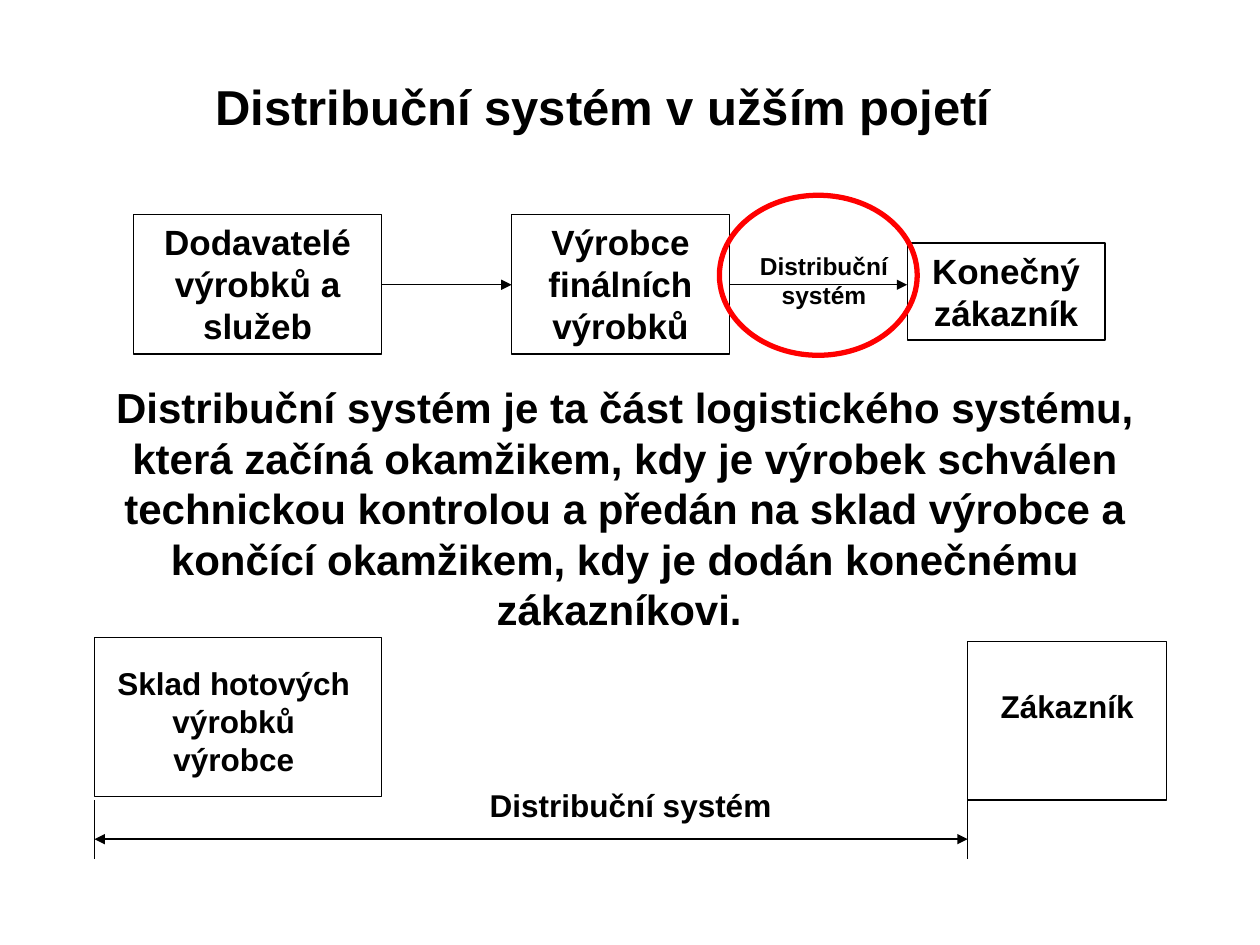
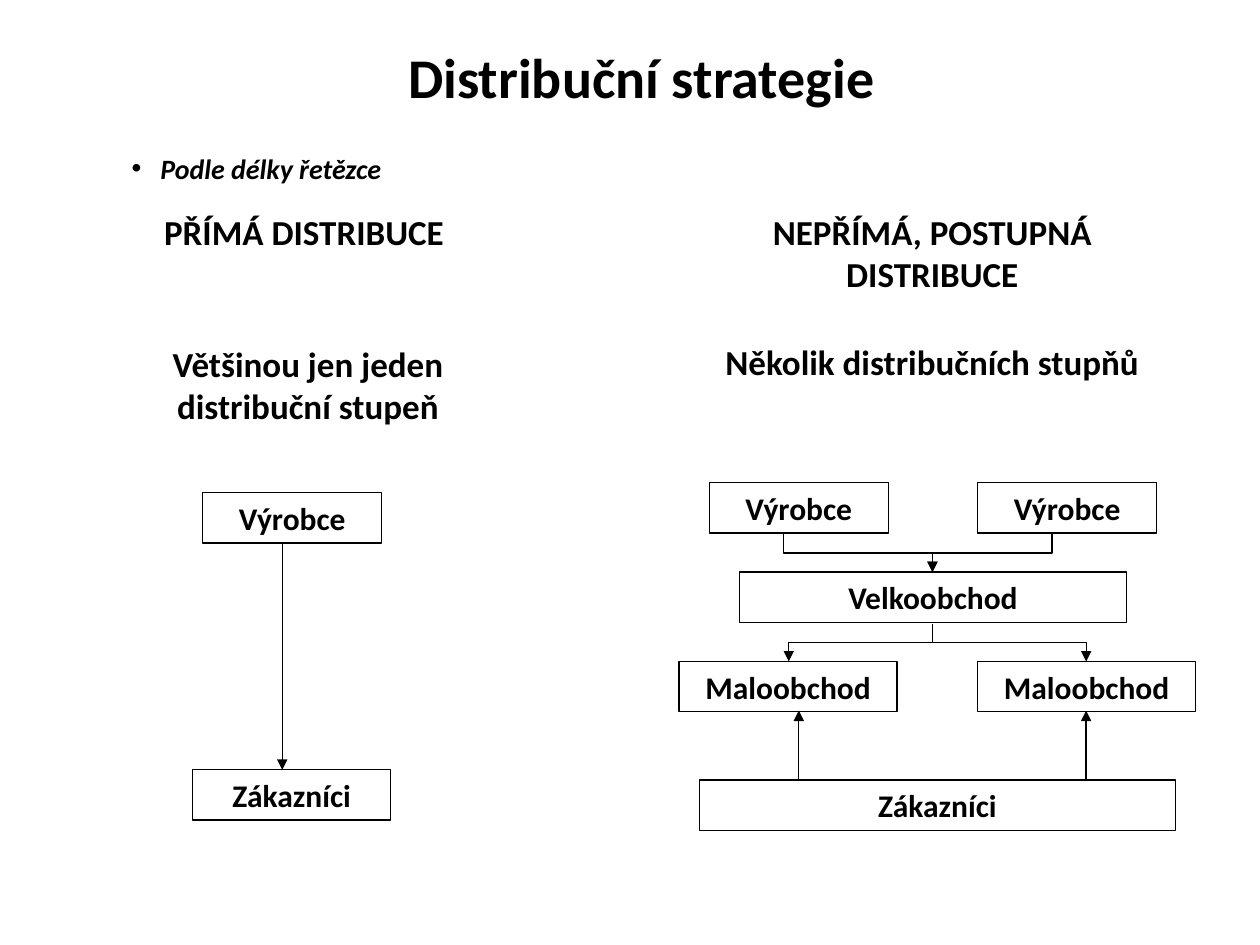
"""Build two slides on distribution systems and distribution strategies."""
import pptx
import pptx.util
import pptx.dml.color
import pptx.enum.shapes
import pptx.enum.text
import pptx.oxml.ns
import lxml.etree

Inches = pptx.util.Inches
Pt = pptx.util.Pt
qn = pptx.oxml.ns.qn
ALIGN = pptx.enum.text.PP_ALIGN
SHAPE = pptx.enum.shapes.MSO_SHAPE
CONNECTOR = pptx.enum.shapes.MSO_CONNECTOR
COLORS = {
    name: pptx.dml.color.RGBColor.from_string(value)
    for name, value in {"ink": "000000", "paper": "FFFFFF", "ring": "FF0000"}.items()
}


def add_box(page, place, text, font, size, outlined=False, filled=True, title=False):
    """Place one box of bold text, or the title placeholder, on the page."""
    if title:
        box = page.shapes.title
        box.left, box.top, box.width, box.height = map(Inches, place)
    else:
        box = page.shapes.add_shape(SHAPE.RECTANGLE, *map(Inches, place))
        box.shadow.inherit = False
    if filled:
        box.fill.solid()
        box.fill.fore_color.rgb = COLORS["paper"]
    else:
        box.fill.background()
    if outlined:
        box.line.color.rgb = COLORS["ink"]
        box.line.width = Pt(0.75)
    else:
        box.line.fill.background()
    frame = box.text_frame
    frame.text = text
    frame.word_wrap = True
    frame.auto_size = pptx.enum.text.MSO_AUTO_SIZE.NONE
    frame.vertical_anchor = pptx.enum.text.MSO_ANCHOR.TOP
    para = frame.paragraphs[0]
    para.alignment = ALIGN.LEFT if title else ALIGN.CENTER
    for span in para.runs:
        span.font.name = font
        span.font.size = Pt(size)
        span.font.bold = True
        span.font.color.rgb = COLORS["ink"]
    return box


def add_line(page, start, end, arrows=("tailEnd",), bent=False):
    """Draw a straight line, or an elbow that leaves and arrives vertically."""
    (x1, y1), (x2, y2) = start, end
    kind = CONNECTOR.STRAIGHT
    rightward = x2 > x1
    if bent:
        kind = CONNECTOR.ELBOW
        middle_x, middle_y = (x1 + x2) / 2, (y1 + y2) / 2
        half_width, half_height = (y2 - y1) / 2, abs(x2 - x1) / 2
        side = 1 if rightward else -1
        x1, x2 = middle_x + side * half_width, middle_x - side * half_width
        y1, y2 = middle_y - half_height, middle_y + half_height
    line = page.shapes.add_connector(kind, *map(Inches, (x1, y1, x2, y2)))
    line.line.color.rgb = COLORS["ink"]
    line.line.width = Pt(0.75)
    properties = line._element.spPr
    if bent:
        turn = 270 if rightward else 90
        properties.find(qn("a:xfrm")).set("rot", str(turn * 60000))
    for arrow in arrows:
        lxml.etree.SubElement(properties.find(qn("a:ln")), qn(f"a:{arrow}"), type="triangle")
    lxml.etree.SubElement(properties, qn("a:effectLst"))


deck = pptx.Presentation()
deck.slide_width = Inches(10)
deck.slide_height = Inches(7.5)
title_only = deck.slide_layouts[5]

page = deck.slides.add_slide(title_only)
font = "Arial"
add_box(page, (1.61, 0.56, 6.6, 0.57), "Distribuční systém v užším pojetí", font, 28,
        filled=False, title=True)

for place, text in [
    ((1.06, 1.7, 1.97, 1.11), "Dodavatelé výrobků a služeb"),
    ((4.06, 1.7, 1.73, 1.11), "Výrobce finálních výrobků"),
    ((7.2, 1.93, 1.57, 0.77), "Konečný zákazník"),
]:
    add_box(page, place, text, font, 20, outlined=True)
for start_x, end_x in [(3.03, 4.06), (5.79, 7.2)]:
    add_line(page, (start_x, 2.26), (end_x, 2.26))
add_box(page, (5.79, 1.94, 1.5, 0.57), "Distribuční systém", font, 14, filled=False)

ring = page.shapes.add_shape(SHAPE.OVAL, Inches(5.71), Inches(1.55), Inches(1.57), Inches(1.27))
ring.shadow.inherit = False
ring.fill.background()
ring.line.color.rgb = COLORS["ring"]
ring.line.width = Pt(3)

definition = add_box(
    page, (0.67, 2.97, 8.58, 2.12),
    "Distribuční systém je ta část logistického systému, která začíná okamžikem, "
    "kdy je výrobek schválen technickou kontrolou a předán na sklad výrobce a končící "
    "okamžikem, kdy je dodán konečnému zákazníkovi. ", font, 24)
definition.text_frame.vertical_anchor = pptx.enum.text.MSO_ANCHOR.MIDDLE

for frame_place, place, text in [
    ((0.75, 5.06, 2.28, 1.26), (0.83, 5.22, 2.05, 1.01), "Sklad hotových výrobků výrobce"),
    ((7.68, 5.09, 1.58, 1.26), (7.84, 5.4, 1.26, 0.4), "Zákazník"),
]:
    add_box(page, frame_place, "", font, 18, outlined=True)
    add_box(page, place, text, font, 18)
    add_line(page, (frame_place[0], 6.35), (frame_place[0], 6.82), arrows=())
add_box(page, (3.43, 6.19, 3.15, 0.4), "Distribuční systém", font, 18)
add_line(page, (0.75, 6.66), (7.68, 6.66), arrows=("headEnd", "tailEnd"))

page = deck.slides.add_slide(title_only)
font = "Calibri"
add_box(page, (3.14, 0.29, 4.65, 0.64), "Distribuční strategie", font, 32, title=True)

criterion = add_box(page, (0.38, 1.15, 3.31, 0.37), "Podle délky řetězce", font, 16, filled=False)
para = criterion.text_frame.paragraphs[0]
para.runs[0].font.italic = True
bullet = para._p.get_or_add_pPr()
bullet.set("marL", str(Inches(0.23)))
bullet.set("indent", str(-Inches(0.23)))
lxml.etree.SubElement(bullet, qn("a:buFont"), typeface="Arial")
lxml.etree.SubElement(bullet, qn("a:buChar"), char="•")

for place, text in [
    ((0.83, 1.62, 3.23, 0.77), "PŘÍMÁ DISTRIBUCE "),
    ((0.83, 2.67, 3.23, 0.77), "Většinou jen jeden distribuční stupeň"),
    ((5.63, 1.62, 3.54, 0.77), "NEPŘÍMÁ, POSTUPNÁ DISTRIBUCE"),
    ((5.63, 2.65, 3.54, 0.44), "Několik distribučních stupňů"),
]:
    add_box(page, place, text, font, 20)

for left, top, width, text in [
    (1.61, 3.91, 1.42, "Výrobce"),
    (1.53, 6.11, 1.57, "Zákazníci"),
    (5.63, 3.83, 1.42, "Výrobce"),
    (7.76, 3.83, 1.42, "Výrobce"),
    (5.87, 4.54, 3.07, "Velkoobchod"),
    (5.39, 5.25, 1.73, "Maloobchod"),
    (7.76, 5.25, 1.73, "Maloobchod"),
    (5.55, 6.19, 3.78, "Zákazníci"),
]:
    add_box(page, (left, top, width, 0.4), text, font, 18, outlined=True)

wholesale_x = 7.4
for producer_x in (6.22, 8.35):
    add_line(page, (producer_x, 4.24), (wholesale_x, 4.54), bent=True)
for retailer_x in (6.26, 8.62):
    add_line(page, (wholesale_x, 4.95), (retailer_x, 5.25), bent=True)
for customer_x in (6.34, 8.62):
    add_line(page, (customer_x, 6.19), (customer_x, 5.64))
add_line(page, (2.24, 4.3), (2.24, 6.11))

deck.save("out.pptx")
